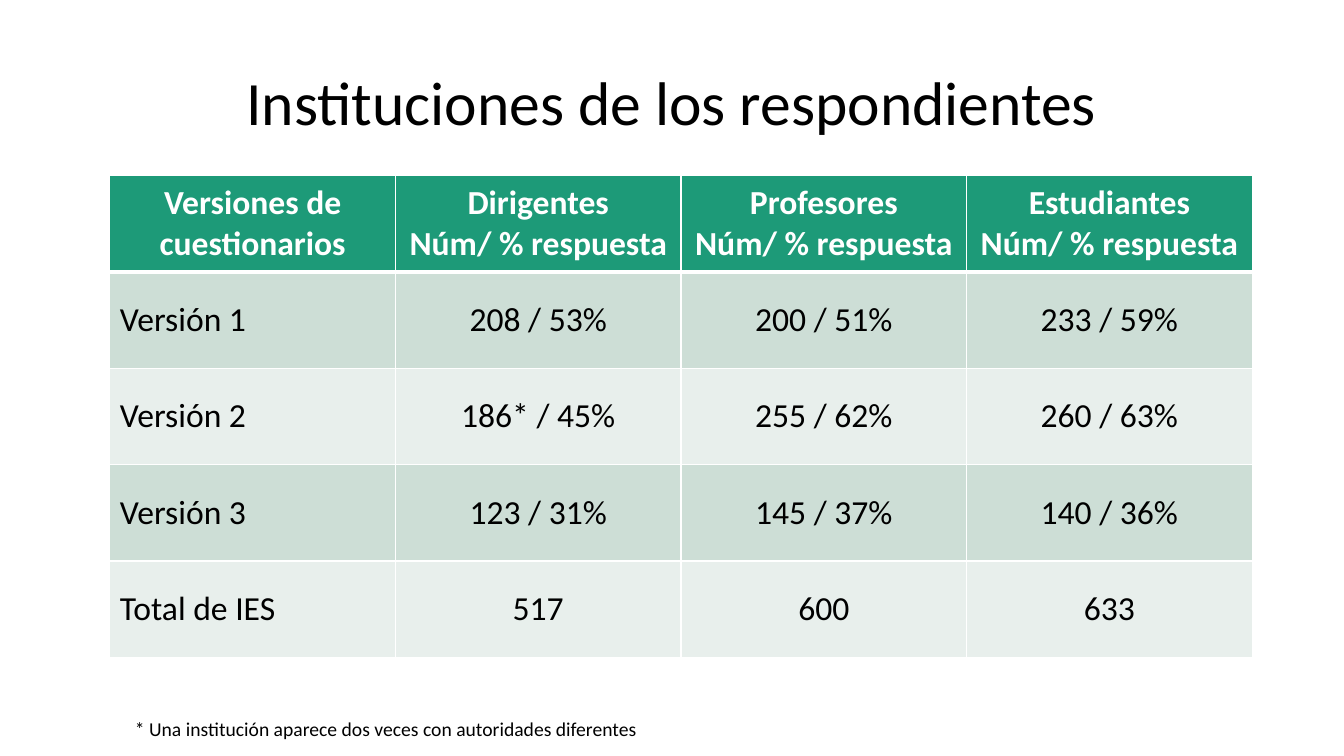
from lxml.etree import SubElement
from pptx import Presentation
from pptx.dml.color import RGBColor
from pptx.enum.text import MSO_ANCHOR, PP_ALIGN
from pptx.oxml.ns import qn
from pptx.util import Pt

HEADER = ["Versiones de cuestionarios"] + [
    f"{group}\nNúm/ % respuesta" for group in ("Dirigentes", "Profesores", "Estudiantes")
]
ROWS = [
    ["Versión 1", "208 / 53%", "200 / 51%", "233 / 59%"],
    ["Versión 2", "186* / 45%", "255 / 62%", "260 / 63%"],
    ["Versión 3", "123 / 31%", "145 / 37%", "140 / 36%"],
    ["Total de IES", "517", "600", "633"],
]


def color(value):
    return RGBColor.from_string(value)


def write(frame, text, size=24, ink="000000", bold=False, font="Calibri",
          align=PP_ALIGN.LEFT, spacing=None):
    """Fill a text frame, one paragraph per line of text."""
    frame.word_wrap = True
    frame.text = text
    for paragraph in frame.paragraphs:
        paragraph.alignment = align
        if spacing:
            paragraph.line_spacing = spacing
        for run in paragraph.runs:
            run.font.name = font
            run.font.size = Pt(size)
            run.font.bold = bold
            run.font.color.rgb = color(ink)


class SlideBuilder:
    header_fill = "1D9A78"
    band_fills = ("CDDED6", "E8EFEC")
    border = "FFFFFF"

    def __init__(self, slide):
        self.slide = slide

    def text(self, left, top, width, height, text, anchor=MSO_ANCHOR.TOP, **style):
        shape = self.slide.shapes.add_textbox(Pt(left), Pt(top), Pt(width), Pt(height))
        shape.text_frame.vertical_anchor = anchor
        write(shape.text_frame, text, **style)

    def borders(self, cell, **widths):
        properties = cell._tc.get_or_add_tcPr()
        for side, width in widths.items():
            line = SubElement(properties, qn(f"a:ln{side}"), w=str(Pt(width)))
            fill = SubElement(line, qn("a:solidFill"))
            SubElement(fill, qn("a:srgbClr"), val=self.border)

    def table(self, left, top, column_width, row_height, rows):
        column_count = len(rows[0])
        table = self.slide.shapes.add_table(
            len(rows), column_count, Pt(left), Pt(top),
            Pt(column_width * column_count), Pt(row_height * len(rows))).table
        for column in table.columns:
            column.width = Pt(column_width)
        for row_index, values in enumerate(rows):
            table.rows[row_index].height = Pt(row_height)
            is_header = row_index == 0
            fill = self.header_fill if is_header else self.band_fills[(row_index - 1) % 2]
            for column_index, value in enumerate(values):
                cell = table.cell(row_index, column_index)
                centered = is_header or column_index > 0
                cell.vertical_anchor = MSO_ANCHOR.MIDDLE
                write(cell.text_frame, value, bold=is_header,
                      ink="FFFFFF" if is_header else "000000",
                      align=PP_ALIGN.CENTER if centered else PP_ALIGN.LEFT)
                # Thick line under the header, thin lines elsewhere
                self.borders(cell, L=1, R=1, T=3 if row_index == 1 else 1,
                             B=3 if is_header else 1)
                cell.fill.solid()
                cell.fill.fore_color.rgb = color(fill)


def main():
    presentation = Presentation()
    presentation.slide_width, presentation.slide_height = Pt(960), Pt(540)
    slide = presentation.slides.add_slide(presentation.slide_layouts[6])
    builder = SlideBuilder(slide)

    # Title
    builder.text(66, 23, 828, 104.4, "Instituciones de los respondientes",
                 anchor=MSO_ANCHOR.MIDDLE, size=44, align=PP_ALIGN.CENTER, spacing=0.9)
    # Responses by questionnaire version
    builder.table(78.5, 125.5, 204, 68.8, [HEADER] + ROWS)
    # Footnote
    builder.text(89.3, 508.3, 377.3, 24.5,
                 "* Una institución aparece dos veces con autoridades diferentes", size=14)

    presentation.save("out.pptx")


if __name__ == "__main__":
    main()
